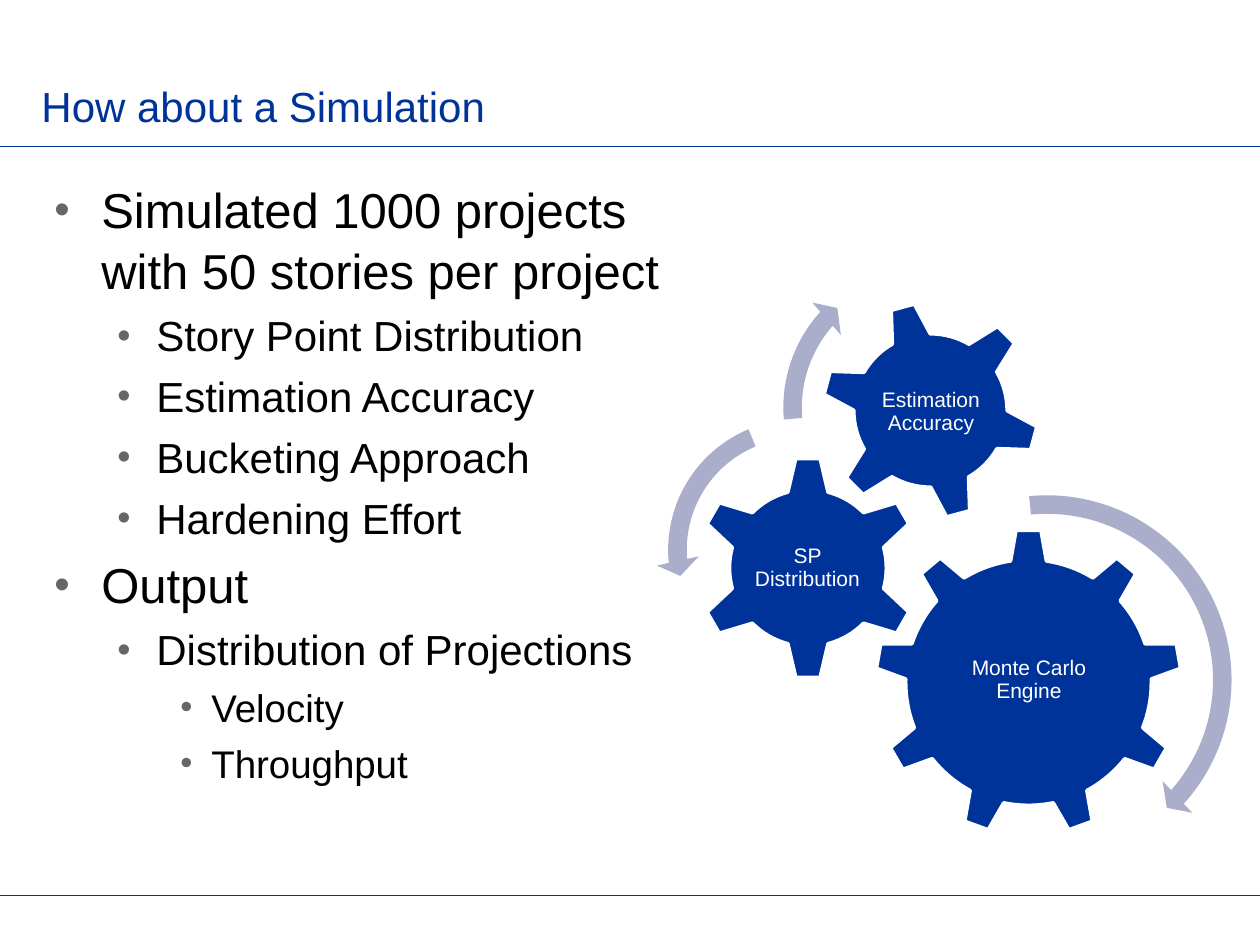
import pptx
import pptx.util
import pptx.dml.color
import pptx.enum.shapes
import pptx.enum.text
import pptx.oxml
import pptx.oxml.ns
import lxml.etree

PX = 914400 // 126
NAVY, PALE, WHITE = "003399", "ABAECA", "FFFFFF"
KIND = pptx.enum.shapes.MSO_SHAPE
ALIGN = pptx.enum.text.PP_ALIGN
ANCHOR = pptx.enum.text.MSO_ANCHOR


def paint(target, code):
    if hasattr(target, "solid"):
        target.solid()
        target = target.fore_color
    target.rgb = pptx.dml.color.RGBColor.from_string(code)


def write(para, text, size, code, form):
    para.text = text
    font = para.font
    font.name, font.size = "Arial", pptx.util.Pt(size)
    paint(font.color, code)
    for name, value in form.items():
        setattr(para, name, value)


deck = pptx.Presentation()
deck.slide_width, deck.slide_height = 1260 * PX, 945 * PX
slide = deck.slides.add_slide(deck.slide_layouts[6])
shapes = slide.shapes

# Rules above and below the content
for y in (146, 895):
    rule = shapes.add_connector(
        pptx.enum.shapes.MSO_CONNECTOR.STRAIGHT, 0, y * PX, 1260 * PX, y * PX)
    paint(rule.line.fill, NAVY)
    rule.line.width = pptx.util.Pt(0.5)
    lxml.etree.SubElement(rule._element.spPr, pptx.oxml.ns.qn("a:effectLst"))

# Title
title = shapes.add_textbox(29 * PX, 19 * PX, 1043 * PX, 118 * PX).text_frame
title.word_wrap = True
title.vertical_anchor = ANCHOR.BOTTOM
write(title.paragraphs[0], "How about a Simulation", 24, NAVY, {})

# Bullet list: size, left margin and hanging indent for each level
levels = [(28, 47, 47), (24, 102, 39), (22, 157, 31)]
points = [
    (0, "Simulated 1000 projects with 50 stories per project"),
    (1, "Story Point Distribution"),
    (1, "Estimation Accuracy"),
    (1, "Bucketing Approach"),
    (1, "Hardening Effort"),
    (0, "Output"),
    (1, "Distribution of Projections"),
    (2, "Velocity"),
    (2, "Throughput"),
]
marks = (
    '<a:buClr %s><a:srgbClr val="666666"/></a:buClr>',
    '<a:buSzPct %s val="90000"/>',
    '<a:buFont %s typeface="Arial"/>',
    '<a:buChar %s char="•"/>',
)
body = shapes.add_textbox(42 * PX, 171 * PX, 693 * PX, 669 * PX).text_frame
body.word_wrap = True
for i, (level, text) in enumerate(points):
    para = body.add_paragraph() if i else body.paragraphs[0]
    size, left, hang = levels[level]
    props = para._p.get_or_add_pPr()
    props.set("marL", str(left * PX))
    props.set("indent", str(-hang * PX))
    for mark in marks:
        props.append(pptx.oxml.parse_xml(mark % pptx.oxml.ns.nsdecls("a")))
    gap = pptx.util.Pt(0.2 * size if i else 0)
    write(para, text, size, "000000",
          {"level": level, "line_spacing": 1.04, "space_before": gap})

# Gears: kind, left, top, side, turn, label and label box
gears = [
    (KIND.GEAR_9, 875, 529, 307, 0, "Monte Carlo Engine", (937, 601, 184, 159)),
    (KIND.GEAR_6, 696, 456, 224, 0, "SP Distribution", (752, 513, 111, 111)),
    (KIND.GEAR_6, 821, 301, 219, 345, "Estimation Accuracy", (869, 350, 124, 124)),
]
for kind, x, y, side, turn, text, area in gears:
    gear = shapes.add_shape(kind, x * PX, y * PX, side * PX, side * PX)
    gear.shadow.inherit = False
    gear.rotation = turn
    paint(gear.fill, NAVY)
    paint(gear.line.fill, WHITE)
    gear.line.width = pptx.util.Pt(2)
    label = shapes.add_textbox(*(n * PX for n in area)).text_frame
    frame = {"word_wrap": True, "vertical_anchor": ANCHOR.MIDDLE}
    for edge in ("left", "top", "right", "bottom"):
        frame["margin_" + edge] = 2 * PX
    for name, value in frame.items():
        setattr(label, name, value)
    write(label.paragraphs[0], text, 12, WHITE,
          {"alignment": ALIGN.CENTER, "line_spacing": 0.9})

# Curved arrows: kind, left, top, side and adjustments as raw values
arrows = [
    (KIND.CIRCULAR_ARROW, 850, 483, 394, (4700, 299000, 2513100, 15867900, 5500)),
    (KIND.LEFT_CIRCULAR_ARROW, 656, 407, 286, (6500, 430000, 10489100, 14837800, 7500)),
    (KIND.CIRCULAR_ARROW, 771, 253, 309, (6000, 394100, 13313800, 10508200, 7000)),
]
for kind, x, y, side, bends in arrows:
    arrow = shapes.add_shape(kind, x * PX, y * PX, side * PX, side * PX)
    arrow.shadow.inherit = False
    paint(arrow.fill, PALE)
    arrow.line.fill.background()
    for i, bend in enumerate(bends):
        arrow.adjustments[i] = bend / 100000

deck.save("out.pptx")
